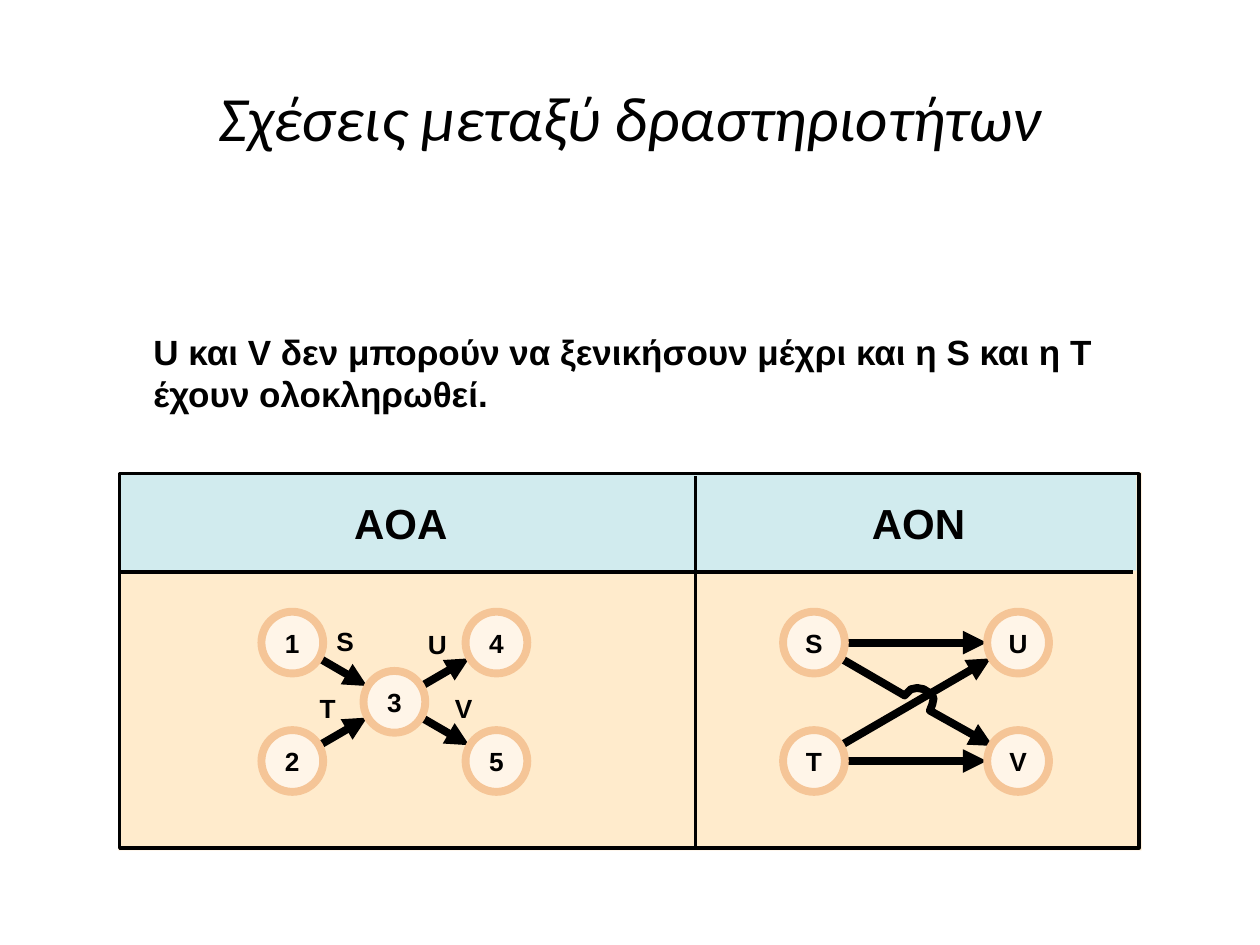
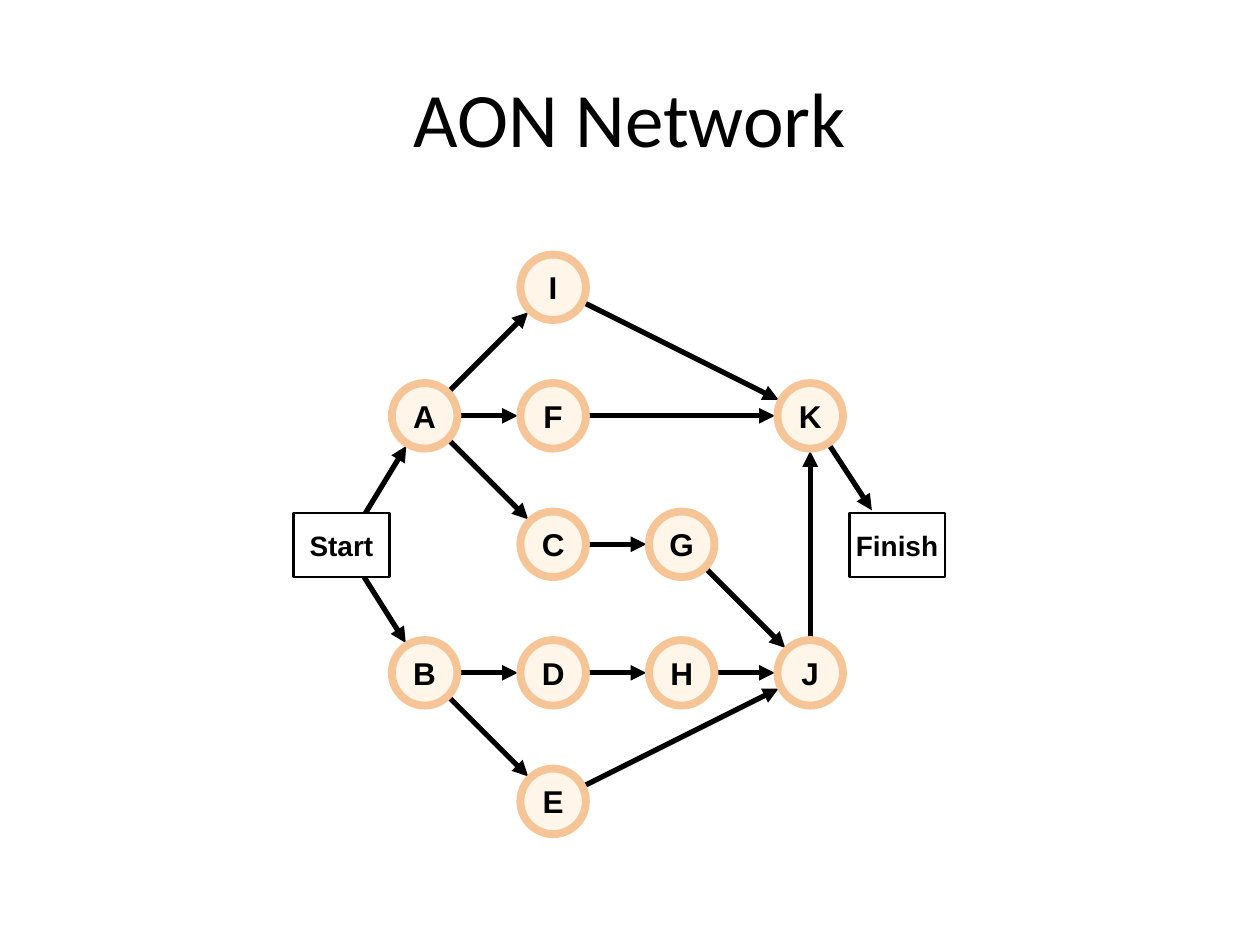
"""Builds two slides on activity relations and an AON network."""
from math import hypot

from lxml import etree
from pptx import Presentation
from pptx.dml.color import RGBColor
from pptx.enum.shapes import MSO_CONNECTOR, MSO_SHAPE
from pptx.enum.text import MSO_ANCHOR, PP_ALIGN
from pptx.oxml.ns import qn
from pptx.util import Inches, Pt

STRAIGHT = MSO_CONNECTOR.STRAIGHT
RECTANGLE, OVAL = MSO_SHAPE.RECTANGLE, MSO_SHAPE.OVAL
MIDDLE = MSO_ANCHOR.MIDDLE
CENTER, LEFT = PP_ALIGN.CENTER, PP_ALIGN.LEFT

COLORS = {
    "ink": "000000",
    "paper": "FFFFFF",
    "panel": "FFEBCC",
    "header": "D1EBEE",
    "node": "FFF5E8",
    "ring": "F5C597",
}


def color(name):
    """Return the named colour."""
    return RGBColor.from_string(COLORS[name])


def toward(start, end, distance):
    """Return the point at a distance from start on the way to end."""
    dx, dy = end[0] - start[0], end[1] - start[1]
    share = distance / hypot(dx, dy)
    return start[0] + dx * share, start[1] + dy * share


class Deck:
    """Holds the style and the current slide."""

    def __init__(self):
        """Open a blank presentation of the right size."""
        self.presentation = Presentation()
        self.presentation.slide_width = Inches(10)
        self.presentation.slide_height = Inches(7.5)
        self.slide = None

    def add_slide(self, title, size, italic=False):
        """Start a slide with a centred title."""
        self.slide = self.presentation.slides.add_slide(self.presentation.slide_layouts[5])
        heading = self.slide.shapes.title
        heading.left, heading.top = Inches(0.5), Inches(0.3)
        heading.width, heading.height = Inches(9), Inches(1.25)
        self.set_text(heading, title, size, font="Calibri", bold=False, italic=italic)

    def set_text(self, shape, text, size, font="Arial", bold=True, italic=False, align=CENTER):
        """Put one formatted paragraph into a shape."""
        frame = shape.text_frame
        frame.text = text
        frame.vertical_anchor = MIDDLE
        paragraph = frame.paragraphs[0]
        paragraph.alignment = align
        style = paragraph.runs[0].font
        style.name, style.size = font, Pt(size)
        style.bold, style.italic = bold, italic
        style.color.rgb = color("ink")

    def paint(self, shape, fill=None, line=None, weight=1):
        """Set fill and outline, and remove the shadow."""
        shape.shadow.inherit = False
        if fill:
            shape.fill.solid()
            shape.fill.fore_color.rgb = color(fill)
        else:
            shape.fill.background()
        if line:
            shape.line.color.rgb = color(line)
            shape.line.width = Pt(weight)
        else:
            shape.line.fill.background()

    def shape(self, kind, left, top, width, height, fill=None, line=None, weight=1):
        """Add a preset shape with no text margins."""
        shape = self.slide.shapes.add_shape(
            kind, Inches(left), Inches(top), Inches(width), Inches(height))
        self.paint(shape, fill, line, weight)
        frame = shape.text_frame
        frame.word_wrap = False
        frame.margin_left = frame.margin_right = frame.margin_top = frame.margin_bottom = 0
        return shape

    def node(self, text, center, radius, size):
        """Add a ringed circle with its letter."""
        x, y = center
        circle = self.shape(OVAL, x - radius, y - radius, 2 * radius, 2 * radius,
                            "node", "ring", 4.5)
        self.set_text(circle, text, size)

    def terminal(self, text, left, top):
        """Add a start or finish box."""
        box = self.shape(RECTANGLE, left, top, 0.76, 0.51, "paper", "ink", 1.5)
        self.set_text(box, text, 16)

    def label(self, text, center, size, width=0.45, height=0.4):
        """Add a text box centred on a point."""
        x, y = center
        box = self.slide.shapes.add_textbox(
            Inches(x - width / 2), Inches(y - height / 2), Inches(width), Inches(height))
        box.text_frame.word_wrap = False
        self.set_text(box, text, size)

    def statement(self, text, left, top, width, height):
        """Add a wrapped statement."""
        box = self.slide.shapes.add_textbox(
            Inches(left), Inches(top), Inches(width), Inches(height))
        box.text_frame.word_wrap = True
        self.set_text(box, text, 20, align=LEFT)

    def arrowhead(self, shape):
        """Put a triangle at the end of a line."""
        outline = shape._element.spPr.find(qn("a:ln"))
        etree.SubElement(outline, qn("a:tailEnd"), type="triangle")

    def line(self, start, end, weight, arrow=False):
        """Add a straight line, with or without an arrowhead."""
        points = [Inches(value) for value in (*start, *end)]
        connector = self.slide.shapes.add_connector(STRAIGHT, *points)
        connector.line.color.rgb = color("ink")
        connector.line.width = Pt(weight)
        if arrow:
            self.arrowhead(connector)
        etree.SubElement(connector._element.spPr, qn("a:effectLst"))

    def bent_arrow(self, points, weight):
        """Add an open outline that ends in an arrowhead."""
        corners = [(Inches(x), Inches(y)) for x, y in points]
        builder = self.slide.shapes.build_freeform(*corners[0])
        builder.add_line_segments(corners[1:], close=False)
        bend = builder.convert_to_shape()
        self.paint(bend, line="ink", weight=weight)
        self.arrowhead(bend)

    def network(self, centers, edges, radius, gap, size, weight):
        """Draw arrows between nodes, then the nodes over them."""
        for source, target in edges:
            start, end = centers[source], centers[target]
            self.line(toward(start, end, radius), toward(end, start, gap), weight, arrow=True)
        for name, center in centers.items():
            self.node(name, center, radius, size)


def relations_slide(deck):
    """Compare the two notations for one relation."""
    deck.add_slide("Σχέσεις μεταξύ δραστηριοτήτων", 36, italic=True)
    deck.statement("U και V δεν μπορούν να ξενικήσουν μέχρι και η S και η T έχουν ολοκληρωθεί.",
                   1.12, 2.58, 7.76, 0.75)

    deck.shape(RECTANGLE, 0.94, 3.75, 8.12, 3, "panel")
    deck.shape(RECTANGLE, 0.94, 3.75, 8.08, 0.78, "header")
    deck.line((0.96, 4.54), (8.99, 4.54), 2)
    deck.line((5.52, 3.78), (5.52, 6.72), 2)
    deck.shape(RECTANGLE, 0.95, 3.76, 8.09, 2.97, line="ink", weight=2)
    for heading, x in (("AOA", 3.18), ("AON", 7.29)):
        deck.label(heading, (x, 4.15), 24, 0.98, 0.52)

    upper, lower = 5.1, 6.04
    style = {"radius": 0.245, "gap": 0.25, "size": 15, "weight": 4.5}
    events = {"1": (2.32, upper), "2": (2.32, lower), "3": (3.13, 5.57),
              "4": (3.94, upper), "5": (3.94, lower)}
    deck.network(events, ("13", "23", "34", "35"), **style)
    activity_labels = {"S": (2.74, 5.09), "T": (2.6, 5.62), "U": (3.47, 5.11), "V": (3.68, 5.62)}
    for activity, center in activity_labels.items():
        deck.label(activity, center, 15)

    deck.bent_arrow([(6.63, 5.2), (7.18, 5.52), (7.23, 5.47), (7.28, 5.46), (7.33, 5.47),
                     (7.38, 5.5), (7.41, 5.54), (7.4, 5.59), (7.38, 5.64), (7.88, 5.92)], 4.5)
    activities = {"S": (6.46, upper), "T": (6.46, lower), "U": (8.08, upper), "V": (8.08, lower)}
    deck.network(activities, ("SU", "TU", "TV"), **style)


def network_slide(deck):
    """Draw the whole network from start to finish."""
    deck.add_slide("AON Network", 44)
    pitch = 1.02
    cells = {"I": (1, 0), "A": (0, 1), "F": (1, 1), "K": (3, 1), "C": (1, 2), "G": (2, 2),
             "B": (0, 3), "D": (1, 3), "H": (2, 3), "J": (3, 3), "E": (1, 4)}
    centers = {name: (3.37 + column * pitch, 2.28 + row * pitch)
               for name, (column, row) in cells.items()}
    radius, gap, weight = 0.26, 0.28, 3

    for name, start in (("A", (2.89, 4.09)), ("B", (2.89, 4.58))):
        deck.line(start, toward(centers[name], start, gap), weight, arrow=True)
    finish = (6.92, 4.05)
    deck.line(toward(centers["K"], finish, radius), finish, weight, arrow=True)
    deck.terminal("Start", 2.33, 4.07)
    deck.terminal("Finish", 6.74, 4.07)

    edges = ("AI", "AF", "AC", "IK", "FK", "CG", "GJ", "BD", "BE", "DH", "HJ", "EJ", "JK")
    deck.network(centers, edges, radius, gap, 18, weight)


def main():
    """Build and save the slides."""
    deck = Deck()
    relations_slide(deck)
    network_slide(deck)
    deck.presentation.save("out.pptx")


if __name__ == "__main__":
    main()
